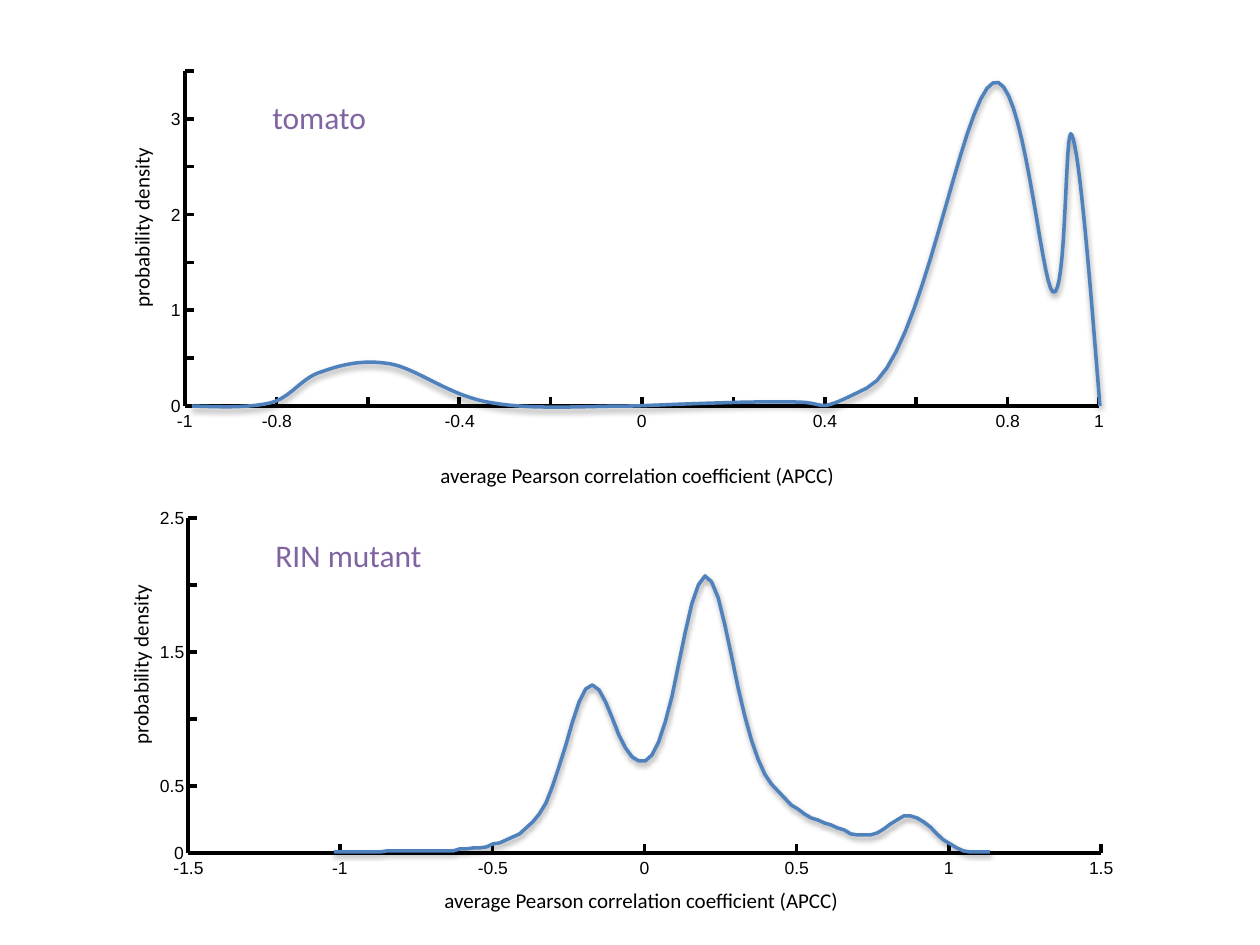
from dataclasses import dataclass

from lxml.etree import SubElement
from pptx import Presentation
from pptx.dml.color import RGBColor
from pptx.enum.shapes import MSO_CONNECTOR
from pptx.enum.text import MSO_AUTO_SIZE
from pptx.oxml.ns import qn
from pptx.util import Emu, Inches, Pt

PIXELS_PER_INCH = 126
BLACK = RGBColor(0x00, 0x00, 0x00)
CURVE_BLUE = RGBColor(0x4F, 0x81, 0xBD)
NAME_PURPLE = RGBColor(0x80, 0x64, 0xA2)

TICK_LENGTH = 9
LABEL_HEIGHT = 24
LABEL_WIDTHS = {1: 18, 2: 24, 3: 32, 4: 37}  # by number of characters
BEZIER_STEPS = 16

TOMATO_START = (192, 406)
TOMATO_BEZIERS = [
    ((220, 407), (248, 408), (270, 403)),
    ((291, 398), (301, 378), (321, 372)),
    ((341, 365), (362, 359), (391, 364)),
    ((418, 369), (451, 397), (493, 403)),
    ((533, 410), (585, 406), (635, 406)),
    ((685, 404), (757, 401), (794, 402)),
    ((832, 402), (811, 416), (867, 388)),
    ((922, 362), (961, 98), (993, 83)),
    ((1023, 67), (1041, 284), (1053, 292)),
    ((1067, 301), (1065, 116), (1072, 135)),
    ((1080, 154), (1090, 280), (1100, 406)),
]

MUTANT_LEFT, MUTANT_RIGHT = 334, 990
MUTANT_HEIGHTS = [852] * 8 + [851] * 11 + [849] * 2 + [848] * 2 + [
    847, 844, 843, 840, 837, 834, 828, 822, 814, 803, 786, 766, 745, 722, 702, 689, 685,
    690, 702, 718, 735, 748, 757, 761, 761, 755, 742, 722, 697, 665, 633, 604, 585, 576,
    582, 598, 625, 656, 688, 716, 740, 759, 774, 784, 791, 798, 805, 809, 814, 818, 820,
    823, 825, 828, 830, 834, 835, 835, 835, 833, 829, 824, 820, 816, 816, 818, 822, 827,
    834, 840, 844, 848, 851,
] + [852] * 4


@dataclass
class Panel:
    """One density plot; tick labels run from low to high, empty where unlabelled."""
    name: str
    left: int
    top: int
    right: int
    bottom: int
    x_labels: list
    y_labels: list
    name_at: tuple
    x_title_at: tuple
    y_title_at: tuple
    points: list


def px(length):
    return Emu(round(length * Inches(1) / PIXELS_PER_INCH))


def bezier_points(start, beziers):
    """Sample a chain of cubic Bézier segments."""
    points = [start]
    for first, second, end in beziers:
        corners = (points[-1], first, second, end)
        for step in range(1, BEZIER_STEPS + 1):
            t = step / BEZIER_STEPS
            weights = ((1 - t) ** 3, 3 * t * (1 - t) ** 2, 3 * t * t * (1 - t), t ** 3)
            points.append(tuple(
                sum(weight * corner[axis] for weight, corner in zip(weights, corners))
                for axis in (0, 1)))
    return points


def mutant_points():
    step = (MUTANT_RIGHT - MUTANT_LEFT) / (len(MUTANT_HEIGHTS) - 1)
    return [(MUTANT_LEFT + index * step, y) for index, y in enumerate(MUTANT_HEIGHTS)]


def add_line(shapes, x1, y1, x2, y2):
    line = shapes.add_connector(MSO_CONNECTOR.STRAIGHT, px(x1), px(y1), px(x2), px(y2))
    line.line.color.rgb = BLACK
    line.line.width = Pt(0)
    SubElement(line._element.spPr, qn("a:effectLst"))


def add_text(shapes, text, box, size, font="Calibri", color=BLACK, wrap=False):
    shape = shapes.add_textbox(*map(px, box))
    frame = shape.text_frame
    frame.text = text
    frame.word_wrap = wrap
    frame.auto_size = MSO_AUTO_SIZE.SHAPE_TO_FIT_TEXT
    paragraph = frame.paragraphs[0]
    paragraph.font.name = font
    paragraph.font.size = Pt(size)
    paragraph.font.color.rgb = color
    return shape


def add_tick_label(shapes, text, left, top):
    box = (left, top, LABEL_WIDTHS[len(text)], LABEL_HEIGHT)
    frame = add_text(shapes, text, box, 10, "Arial").text_frame
    frame.margin_left = frame.margin_right = frame.margin_top = frame.margin_bottom = 0


def add_x_axis(shapes, panel):
    add_line(shapes, panel.left, panel.bottom, panel.right, panel.bottom)
    step = (panel.right - panel.left) / (len(panel.x_labels) - 1)
    for index, label in enumerate(panel.x_labels):
        x = panel.left + index * step
        add_line(shapes, x, panel.bottom, x, panel.bottom - TICK_LENGTH)
        if label:
            add_tick_label(shapes, label, x - LABEL_WIDTHS[len(label)] / 2 + 4, panel.bottom + 4)


def add_y_axis(shapes, panel):
    add_line(shapes, panel.left, panel.bottom, panel.left, panel.top)
    step = (panel.bottom - panel.top) / (len(panel.y_labels) - 1)
    for index, label in enumerate(panel.y_labels):
        y = panel.bottom - index * step
        add_line(shapes, panel.left, y, panel.left + TICK_LENGTH, y)
        if label:
            add_tick_label(shapes, label, panel.left + 4 - LABEL_WIDTHS[len(label)], y - 11)


def add_curve(shapes, points):
    start, *others = [(px(x), px(y)) for x, y in points]
    builder = shapes.build_freeform(*start)
    builder.add_line_segments(others, close=False)
    curve = builder.convert_to_shape()
    curve.fill.background()
    curve.line.color.rgb = CURVE_BLUE
    curve.line.width = Pt(2)
    add_soft_shadow(curve)


def add_soft_shadow(shape):
    shape.shadow.inherit = False
    effects = shape._element.spPr.find(qn("a:effectLst"))
    shadow = SubElement(effects, qn("a:outerShdw"), blurRad="40000", dist="20000",
                        dir="5400000", rotWithShape="0")
    color = SubElement(shadow, qn("a:srgbClr"), val=str(BLACK))
    SubElement(color, qn("a:alpha"), val="38000")


def add_panel(slide, panel):
    shapes = slide.shapes.add_group_shape().shapes
    add_x_axis(shapes, panel)
    add_y_axis(shapes, panel)
    add_curve(shapes, panel.points)
    add_text(shapes, "average Pearson correlation coefficient (APCC)",
             (*panel.x_title_at, 425, 38), 12)
    y_title = add_text(shapes, "probability density", (*panel.y_title_at, 185, 38), 12)
    y_title.rotation = 270
    add_text(shapes, panel.name, (*panel.name_at, 229, 50), 18, color=NAME_PURPLE, wrap=True)


def main():
    presentation = Presentation()
    presentation.slide_width = px(1260)
    presentation.slide_height = px(945)
    slide = presentation.slides.add_slide(presentation.slide_layouts[6])
    add_panel(slide, Panel(
        "tomato", left=185, top=71, right=1099, bottom=406,
        x_labels=["-1", "-0.8", "", "-0.4", "", "0", "", "0.4", "", "0.8", "1"],
        y_labels=["0", "", "1", "", "2", "", "3", ""],
        name_at=(260, 92), x_title_at=(428, 456), y_title_at=(49, 208),
        points=bezier_points(TOMATO_START, TOMATO_BEZIERS)))
    add_panel(slide, Panel(
        "RIN mutant", left=188, top=518, right=1101, bottom=853,
        x_labels=["-1.5", "-1", "-0.5", "0", "0.5", "1", "1.5"],
        y_labels=["0", "0.5", "", "1.5", "", "2.5"],
        name_at=(263, 530), x_title_at=(432, 881), y_title_at=(48, 645),
        points=mutant_points()))
    presentation.save("out.pptx")


if __name__ == "__main__":
    main()
